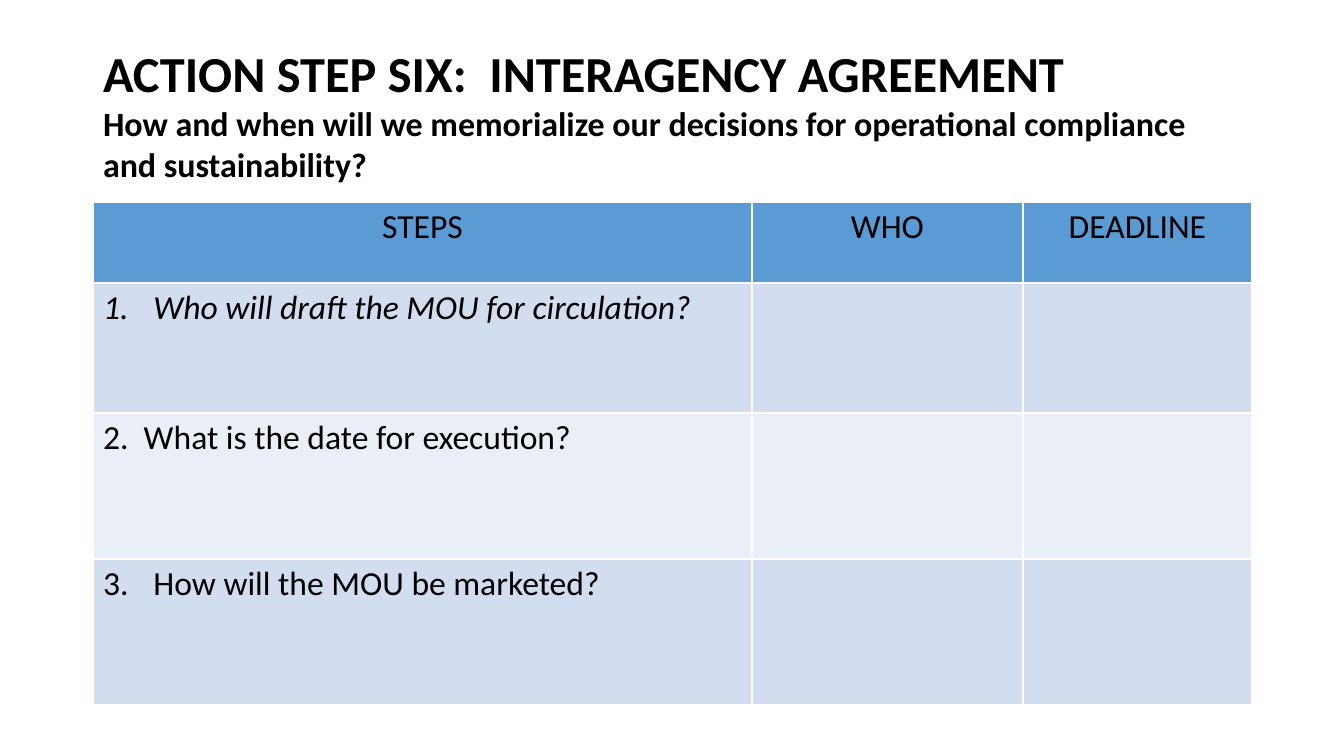
from lxml.etree import SubElement
from pptx import Presentation
from pptx.dml.color import RGBColor
from pptx.enum.text import MSO_ANCHOR, MSO_AUTO_SIZE, PP_ALIGN
from pptx.oxml.ns import qn
from pptx.util import Emu, Pt

BLACK = RGBColor(0x00, 0x00, 0x00)
HEADER_BLUE = RGBColor(0x5B, 0x9B, 0xD5)
BAND_DARK = RGBColor(0xD2, 0xDE, 0xEF)
BAND_LIGHT = RGBColor(0xEA, 0xEF, 0xF7)
BORDER = "FFFFFF"
FONT = "Calibri"


def px(count):
    """Turn pixels, 100.8 to the inch, into EMU."""
    return Emu(round(count * 914400 / 100.8))


def add_run(paragraph, text, size, bold=False, italic=False):
    run = paragraph.add_run()
    run.text = text
    run.font.name = FONT
    run.font.size = Pt(size)
    run.font.bold = bold
    run.font.italic = italic
    run.font.color.rgb = BLACK


prs = Presentation()
prs.slide_width, prs.slide_height = px(1344), px(756)
slide = prs.slides.add_slide(prs.slide_layouts[5])

# Title and guiding question
title = slide.shapes.title
title.left, title.top, title.width, title.height = px(93), px(40), px(1159), px(146)
title_frame = title.text_frame
title_frame.word_wrap = True
title_frame.auto_size = MSO_AUTO_SIZE.NONE
title_frame.vertical_anchor = MSO_ANCHOR.MIDDLE
heading = title_frame.paragraphs[0]
heading.alignment = PP_ALIGN.LEFT
add_run(heading, "ACTION STEP SIX:  INTERAGENCY AGREEMENT", 36, bold=True)
heading.add_line_break()
SubElement(heading._p.find(qn("a:br")), qn("a:rPr"), sz="3600")
add_run(heading, "How and when will we memorialize our decisions for "
        "operational compliance and sustainability?", 24.3, bold=True)

# Planning table
column_widths = [659, 271, 229]
row_heights = [81, 130, 146, 146]
row_fills = [HEADER_BLUE, BAND_DARK, BAND_LIGHT, BAND_DARK]
row_texts = [
    ["STEPS", "WHO", "DEADLINE"],
    ["Who will draft the MOU for circulation?", "", ""],
    ["2.  What is the date for execution?", "", ""],
    ["How will the MOU be marketed?", "", ""],
]
numbered_rows = {1: 1, 3: 3}
italic_row = 1

plan = slide.shapes.add_table(
    len(row_heights), len(column_widths), px(93), px(202),
    px(sum(column_widths)), px(sum(row_heights))).table
for column, width in zip(plan.columns, column_widths):
    column.width = px(width)

for r, (height, fill, texts) in enumerate(zip(row_heights, row_fills, row_texts)):
    plan.rows[r].height = px(height)
    for c, text in enumerate(texts):
        cell = plan.cell(r, c)
        cell_props = cell._tc.get_or_add_tcPr()
        for side in ("lnL", "lnR", "lnT", "lnB"):
            edge = SubElement(cell_props, qn(f"a:{side}"), w=str(Pt(1)))
            edge_fill = SubElement(edge, qn("a:solidFill"))
            SubElement(edge_fill, qn("a:srgbClr"), val=BORDER)
        cell.fill.solid()
        cell.fill.fore_color.rgb = fill
        paragraph = cell.text_frame.paragraphs[0]
        paragraph.alignment = PP_ALIGN.CENTER if r == 0 else PP_ALIGN.LEFT
        if not text:
            continue
        if r in numbered_rows:
            para_props = paragraph._p.get_or_add_pPr()
            para_props.set("marL", str(Pt(36)))
            para_props.set("indent", str(-Pt(36)))
            SubElement(para_props, qn("a:buFont"), typeface="+mj-lt")
            SubElement(para_props, qn("a:buAutoNum"), type="arabicPeriod",
                       startAt=str(numbered_rows[r]))
        add_run(paragraph, text, 24, italic=r == italic_row)

prs.save("out.pptx")
